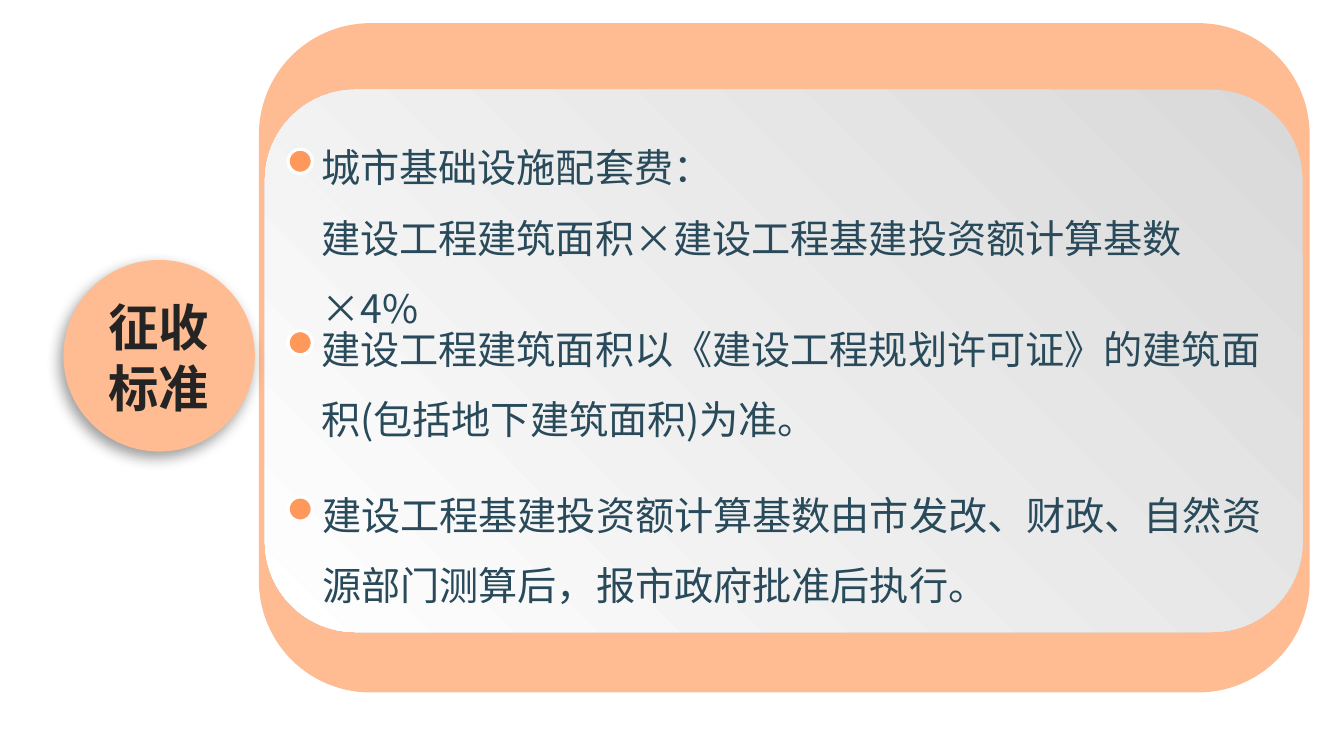
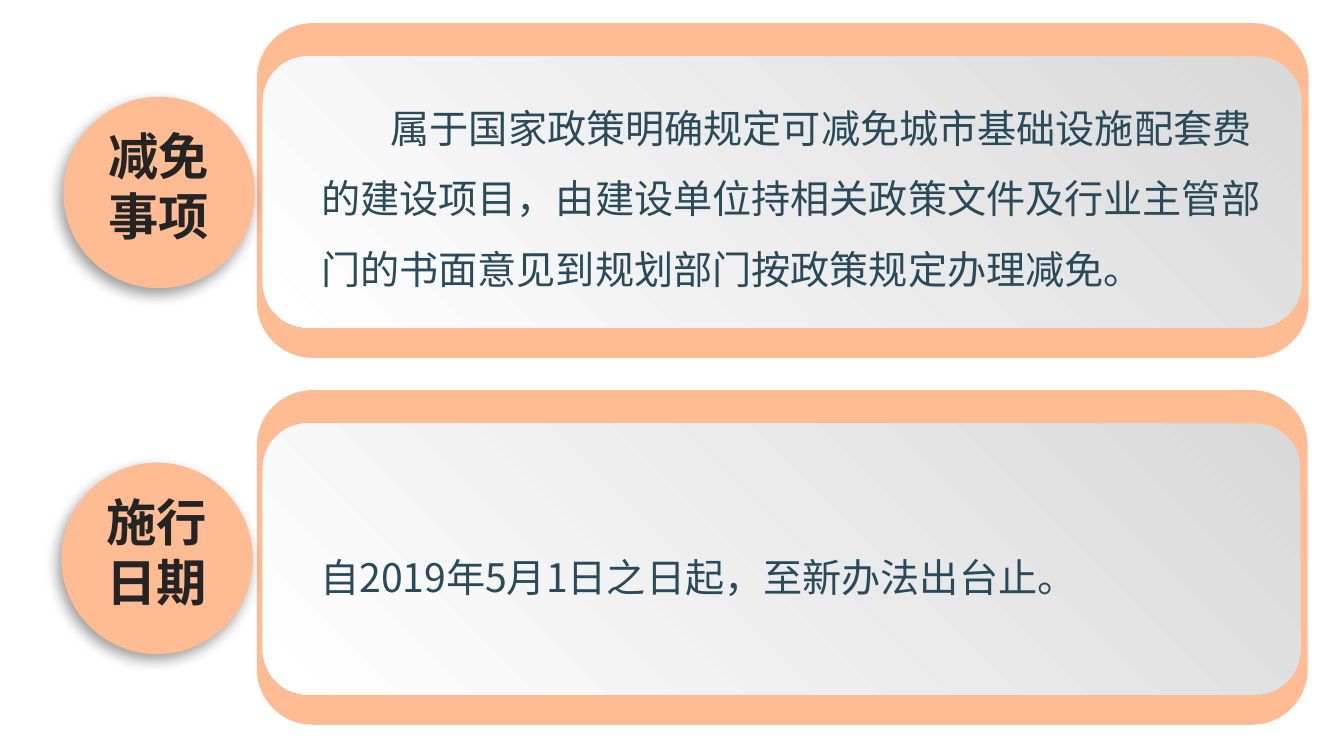
from lxml.etree import SubElement
from pptx import Presentation
from pptx.dml.color import RGBColor
from pptx.enum.shapes import MSO_SHAPE
from pptx.enum.text import MSO_AUTO_SIZE, PP_ALIGN
from pptx.oxml.ns import qn
from pptx.util import Pt

# Shared look: 100 px to the inch
SCALE = 9144
FONT = "Noto Sans CJK SC"
PEACH, ORANGE, WHITE, GREY = "FFBB92", "FF995B", "FFFFFF", "D9D9D9"
INK, BLACK = "294A5A", "242424"


def px(n):
    return round(n) * SCALE


def color(code):
    return RGBColor.from_string(code)


def shape(slide, kind, x, y, w, h, fill=None, line=None):
    item = slide.shapes.add_shape(kind, px(x), px(y), px(w), px(h))
    item.shadow.inherit = False
    if fill:
        item.fill.solid()
        item.fill.fore_color.rgb = color(fill)
    if line:
        item.line.color.rgb = color(line)
        item.line.width = Pt(2.25)
    else:
        item.line.fill.background()
    return item


def text(slide, x, y, w, h, *lines, size=28, ink=INK, bold=False,
         align=PP_ALIGN.LEFT, space=1.5, indent=0):
    frame = slide.shapes.add_textbox(px(x), px(y), px(w), px(h)).text_frame
    frame.word_wrap = True
    frame.auto_size = MSO_AUTO_SIZE.SHAPE_TO_FIT_TEXT
    for i, words in enumerate(lines):
        para = frame.add_paragraph() if i else frame.paragraphs[0]
        para.alignment = align
        para.line_spacing = space
        if indent:
            para._p.get_or_add_pPr().set("indent", str(px(indent)))
        run = para.add_run()
        run.text = words
        font = run.font
        font.name, font.size, font.bold = FONT, Pt(size), bold
        font.color.rgb = color(ink)
        # East Asian typeface
        SubElement(font._element, qn("a:ea"), typeface=FONT)


def card(slide, x, y, w, h):
    """Peach frame with a grey-to-white panel inside."""
    box = MSO_SHAPE.ROUNDED_RECTANGLE
    shape(slide, box, x, y, w, h, PEACH)
    panel = shape(slide, box, x + 6, y + h * 0.1, w - 13, h * 0.81)
    panel.fill.gradient()
    panel.fill.gradient_angle = 225
    for stop, code, place in zip(panel.fill.gradient_stops, (GREY, WHITE), (0, 1)):
        stop.color.rgb = color(code)
        stop.position = place


def shade(item):
    """Soft shadow towards the lower left."""
    effects = item._element.spPr.find(qn("a:effectLst"))
    outer = SubElement(effects, qn("a:outerShdw"), blurRad=str(Pt(10)),
                       dist=str(Pt(5)), dir=str(123 * 60000), rotWithShape="0")
    tint = SubElement(outer, qn("a:srgbClr"), val="000000")
    SubElement(tint, qn("a:alpha"), val="39000")


def badge(slide, x, y, *words, drop=23):
    shade(shape(slide, MSO_SHAPE.OVAL, x, y, 190, 190, PEACH))
    text(slide, x + 9, y + drop, 171, 131, *words, size=36, ink=BLACK,
         bold=True, align=PP_ALIGN.CENTER, space=1)


def point(slide, x, y, h, *lines):
    """Paragraphs led by a round marker."""
    text(slide, x, y, 959, h, *lines)
    shape(slide, MSO_SHAPE.OVAL, 286, y + 34, 24, 24, ORANGE, WHITE)


def rates(slide):
    card(slide, 257, 23, 1043, 664)
    badge(slide, 63, 258, "征收", "标准", drop=31)
    point(slide, 309, 114, 151, "城市基础设施配套费：",
          "建设工程建筑面积×建设工程基建投资额计算基数×4%")
    point(slide, 309, 294, 143,
          "建设工程建筑面积以《建设工程规划许可证》的建筑面积(包括地下建筑面积)为准。")
    point(slide, 310, 459, 151,
          "建设工程基建投资额计算基数由市发改、财政、自然资源部门测算后，报市政府批准后执行。")


def terms(slide):
    # Exemptions
    card(slide, 255, 23, 1044, 332)
    badge(slide, 63, 96, "减免", "事项")
    text(slide, 309, 75, 959, 213,
         "属于国家政策明确规定可减免城市基础设施配套费的建设项目，由建设单位持相关政策文件"
         "及行业主管部门的书面意见到规划部门按政策规定办理减免。", indent=69)
    # Effective date
    card(slide, 255, 387, 1043, 332)
    badge(slide, 61, 459, "施行", "日期")
    text(slide, 308, 521, 959, 81, "自2019年5月1日之日起，至新办法出台止。")


def main():
    deck = Presentation()
    deck.slide_width, deck.slide_height = px(1334), px(750)
    for build in (rates, terms):
        build(deck.slides.add_slide(deck.slide_layouts[6]))
    deck.save("out.pptx")


if __name__ == "__main__":
    main()
